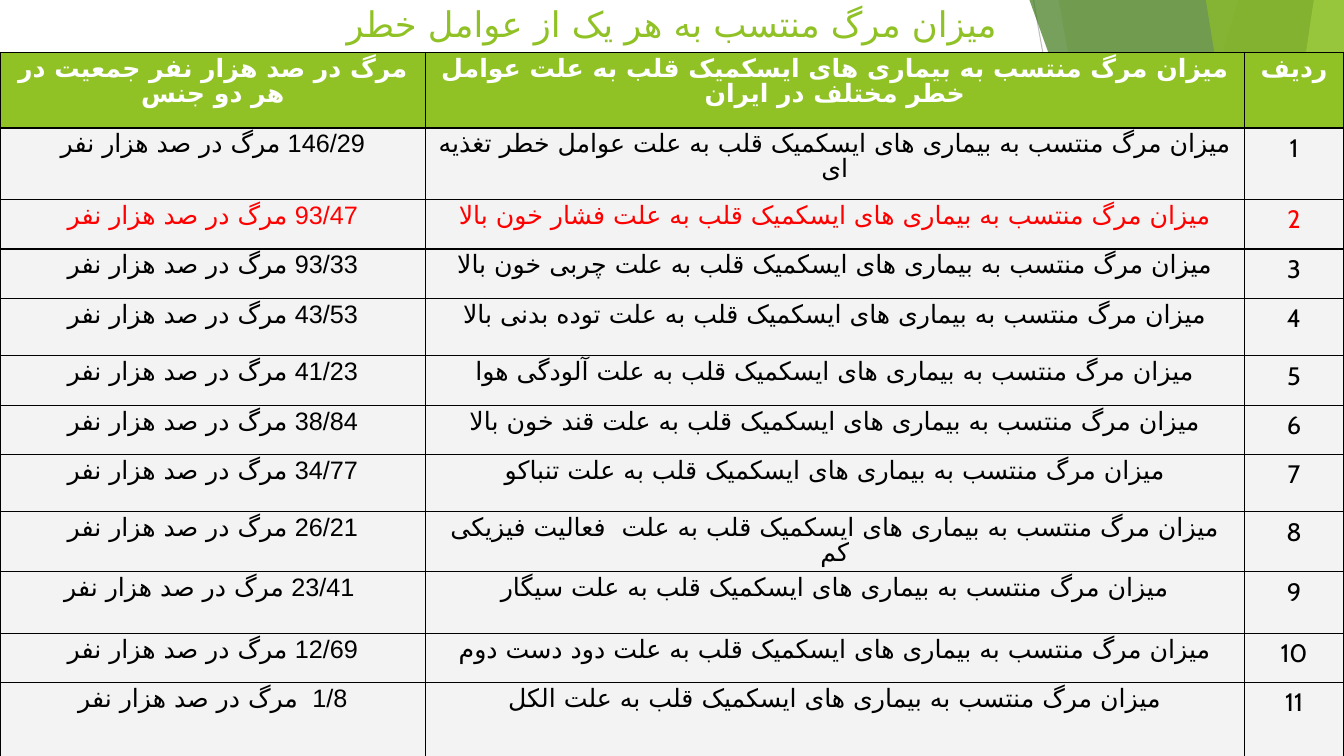
from lxml import etree
from pptx import Presentation
from pptx.dml.color import RGBColor
from pptx.enum.shapes import MSO_CONNECTOR, MSO_SHAPE
from pptx.enum.text import MSO_ANCHOR, PP_ALIGN
from pptx.oxml import parse_xml
from pptx.oxml.ns import nsdecls, qn
from pptx.util import Inches, Pt

CENTER = PP_ALIGN.CENTER
MIDDLE = MSO_ANCHOR.MIDDLE
TRIANGLE = MSO_SHAPE.ISOSCELES_TRIANGLE
STRAIGHT = MSO_CONNECTOR.STRAIGHT

GREEN = RGBColor(0x90, 0xC2, 0x26)
MID_GREEN = RGBColor(0x54, 0xA0, 0x21)
DARK_GREEN = RGBColor(0x3F, 0x78, 0x19)
PALE_GREEN = RGBColor(0xC0, 0xE4, 0x74)
GREY = RGBColor(0xBF, 0xBF, 0xBF)
LIGHT_GREY = RGBColor(0xD9, 0xD9, 0xD9)
CELL_GREY = RGBColor(0xF3, 0xF3, 0xF3)
WHITE = RGBColor(0xFF, 0xFF, 0xFF)
BLACK = RGBColor(0, 0, 0)
RED = RGBColor(0xFF, 0, 0)

WIDTH, HEIGHT = 13.33, 7.5
TITLE_HEIGHT = 0.52
FONT, ARABIC_FONT, DIGIT_FONT = "Cabin", "DejaVu Sans", "Arial"
TITLE_SPACING, TEXT_SPACING, NUMBER_SPACING = 0.9, 0.85, 1.0

TITLE = "میزان مرگ منتسب به هر یک از عوامل خطر"
HEADERS = (
    "مرگ در صد هزار نفر جمعیت در هر دو جنس",
    "میزان مرگ منتسب به بیماری های ایسکمیک قلب به علت عوامل خطر مختلف در ایران",
    "ردیف",
)
RATE_UNIT = "مرگ در صد هزار نفر"
CAUSE_PREFIX = "میزان مرگ منتسب به بیماری های ایسکمیک قلب به علت"
RISKS = (
    ("146/29", "عوامل خطر تغذیه ای"),
    ("93/47", "فشار خون بالا"),
    ("93/33", "چربی خون بالا"),
    ("43/53", "توده بدنی بالا"),
    ("41/23", "آلودگی هوا"),
    ("38/84", "قند خون بالا"),
    ("34/77", "تنباکو"),
    ("26/21", " فعالیت فیزیکی کم"),
    (" 23/41", "سیگار"),
    ("12/69", "دود دست دوم"),
    ("1/8 ", "الکل"),
)
HIGHLIGHTED_ROW = 2
COLUMNS = (4.22, 8.12, 0.99)
ROWS = (0.75, 0.71, 0.49, 0.49, 0.57, 0.49, 0.49, 0.57, 0.49, 0.61, 0.49, 0.73)


def set_fill(shape, color, opacity):
    shape.shadow.inherit = False
    shape.fill.solid()
    shape.fill.fore_color.rgb = color
    shape.line.fill.background()
    srgb = shape.element.spPr.find(qn("a:solidFill"))[0]
    etree.SubElement(srgb, qn("a:alpha"), val=str(opacity * 1000))


def add_line(s, start, end, color):
    line = s.shapes.add_connector(STRAIGHT, *map(Inches, start + end))
    line.line.color.rgb = color
    line.line.width = Pt(0.75)
    etree.SubElement(line.element.spPr, qn("a:effectLst"))


def add_band(s, top_left, bottom_left, color, opacity):
    corners = [(WIDTH, 0), (WIDTH, HEIGHT), (bottom_left, HEIGHT)]
    builder = s.shapes.build_freeform(Inches(top_left), 0)
    builder.add_line_segments([(Inches(x), Inches(y)) for x, y in corners])
    set_fill(builder.convert_to_shape(), color, opacity)


def add_triangle(s, left, width, height, apex, color, opacity):
    box = (left, HEIGHT - height, width, height)
    shape = s.shapes.add_shape(TRIANGLE, *map(Inches, box))
    shape.adjustments[0] = apex
    set_fill(shape, color, opacity)


def add_decoration(s):
    add_line(s, (10.25, 0), (11.58, HEIGHT), GREY)
    add_line(s, (WIDTH, 4.03), (8.12, HEIGHT), LIGHT_GREY)
    add_band(s, 12.28, 10.04, GREEN, 30)
    add_band(s, 10.5, 11.83, GREEN, 20)
    add_triangle(s, 9.77, 3.56, 4.17, 1, MID_GREEN, 72)
    add_band(s, 10.21, 12.91, DARK_GREEN, 70)
    add_band(s, 13.03, 11.92, PALE_GREEN, 70)
    add_band(s, 11.96, 13.18, GREEN, 65)
    add_triangle(s, 11.34, 1.99, 3.57, 1, GREEN, 80)
    add_triangle(s, 0, 0.49, 3.11, 0, GREEN, 85)


def write_text(tf, parts, size, color, bold=False, spacing=1.0, rtl=True):
    p = tf.paragraphs[0]
    p.alignment = CENTER
    p.line_spacing = spacing
    if rtl:
        p._p.get_or_add_pPr().set("rtl", "1")
    for text, arabic_font in parts:
        r = p.add_run()
        r.text = text
        for name, value in {"name": FONT, "size": Pt(size), "bold": bold}.items():
            setattr(r.font, name, value)
        r.font.color.rgb = color
        etree.SubElement(r._r.get_or_add_rPr(), qn("a:cs"), typeface=arabic_font)


def add_title(s):
    title = s.shapes.title
    title.element.getparent().append(title.element)
    box = {"left": 0, "top": 0, "width": WIDTH, "height": TITLE_HEIGHT}
    for name, value in box.items():
        setattr(title, name, Inches(value))
    title.text_frame.vertical_anchor = MIDDLE
    write_text(title.text_frame, [(TITLE, ARABIC_FONT)], 25.2, GREEN,
               spacing=TITLE_SPACING)


def set_borders(cell):
    tcPr = cell._tc.get_or_add_tcPr()
    for index, side in enumerate(("lnL", "lnR", "lnT", "lnB")):
        tcPr.insert(index, parse_xml(
            f'<a:{side} {nsdecls("a")} w="12700"><a:solidFill>'
            f'<a:srgbClr val="{BLACK}"/></a:solidFill></a:{side}>'))


def table_lines():
    yield [[(header, ARABIC_FONT)] for header in HEADERS]
    for number, (rate, cause) in enumerate(RISKS, 1):
        yield [
            [(f"{rate} ", DIGIT_FONT), (RATE_UNIT, ARABIC_FONT)],
            [(f"{CAUSE_PREFIX} {cause}", ARABIC_FONT)],
            [(str(number), DIGIT_FONT)],
        ]


def add_risk_table(s):
    box = (0, TITLE_HEIGHT, WIDTH, sum(ROWS))
    table = s.shapes.add_table(
        len(ROWS), len(COLUMNS), *map(Inches, box)).table
    for column, width in zip(table.columns, COLUMNS):
        column.width = Inches(width)
    for row, height in zip(table.rows, ROWS):
        row.height = Inches(height)
    for i, line in enumerate(table_lines()):
        header = i == 0
        color = WHITE if header else RED if i == HIGHLIGHTED_ROW else BLACK
        for j, parts in enumerate(line):
            cell = table.cell(i, j)
            cell.fill.solid()
            cell.fill.fore_color.rgb = GREEN if header else CELL_GREY
            set_borders(cell)
            is_number = j == 2 and not header
            spacing = NUMBER_SPACING if is_number else TEXT_SPACING
            write_text(cell.text_frame, parts, 18, color, header, spacing, j < 2)


def main():
    prs = Presentation()
    prs.slide_width, prs.slide_height = Inches(WIDTH), Inches(HEIGHT)
    s = prs.slides.add_slide(prs.slide_layouts[5])
    add_decoration(s)
    add_title(s)
    add_risk_table(s)
    prs.save("out.pptx")


if __name__ == "__main__":
    main()
